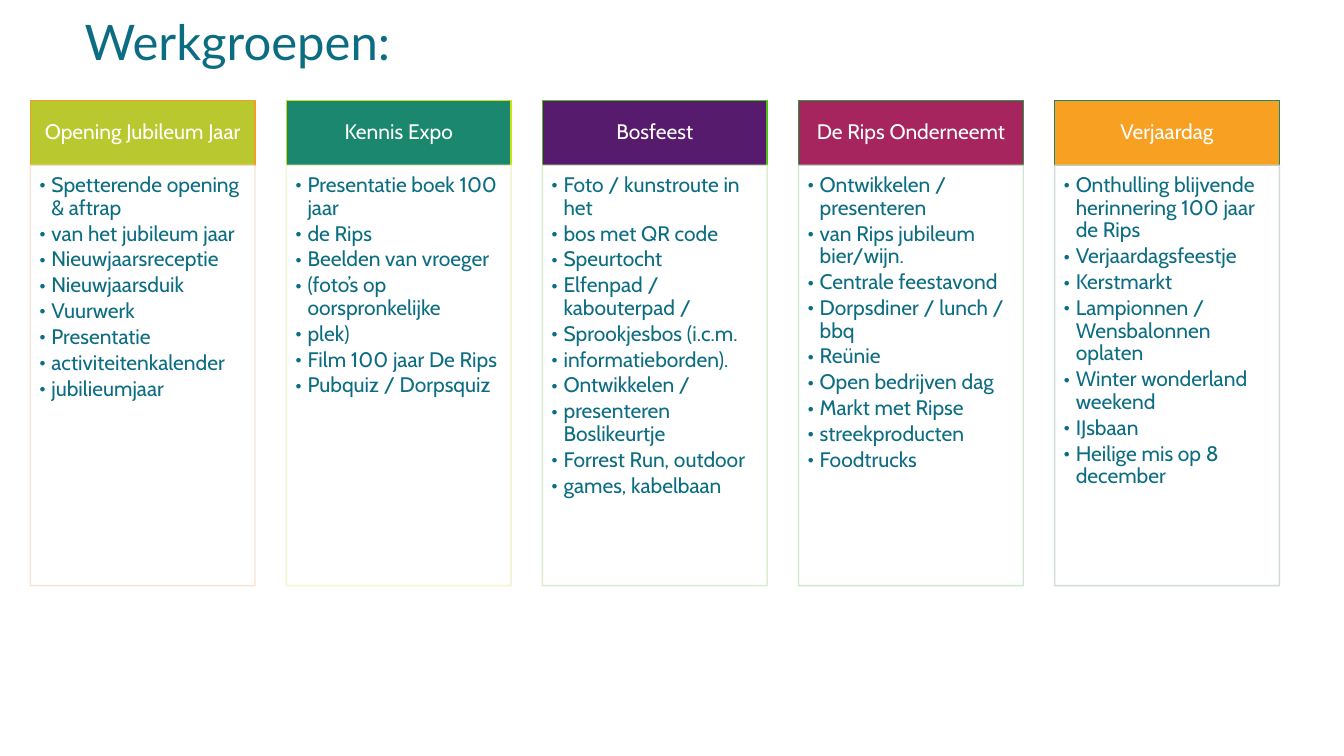
from dataclasses import dataclass

from lxml.etree import SubElement
from pptx import Presentation
from pptx.dml.color import RGBColor
from pptx.enum.shapes import MSO_SHAPE
from pptx.enum.text import MSO_ANCHOR as Anchor, PP_ALIGN as Align
from pptx.oxml.ns import qn
from pptx.util import Inches, Pt


@dataclass(frozen=True)
class Theme:
    teal: str = "0C6D82"
    white: str = "FFFFFF"
    title_font: str = "Lato"
    body_font: str = "Cabin"
    title_size: float = 35
    body_size: float = 15
    headings: tuple = ("BAC82F", "1B876F", "571B6D", "A7255F", "F8A022")
    heading_lines: tuple = ("F39D21", "C7E314", "4DC318", "1AA33B", "1B866F")
    list_lines: tuple = ("FADFCD", "F4F2CB", "DAEDCA", "CAE4CD", "CCD9D5")


theme = Theme()

workgroups = [
    ("Opening Jubileum Jaar", [
        "Spetterende opening & aftrap", "van het jubileum jaar",
        "Nieuwjaarsreceptie", "Nieuwjaarsduik", "Vuurwerk", "Presentatie",
        "activiteitenkalender", "jubilieumjaar"]),
    ("Kennis Expo", [
        "Presentatie boek 100 jaar", "de Rips", "Beelden van vroeger",
        "(foto’s op oorspronkelijke", "plek)", "Film 100 jaar De Rips",
        "Pubquiz / Dorpsquiz"]),
    ("Bosfeest", [
        "Foto / kunstroute in het", "bos met QR code", "Speurtocht",
        "Elfenpad / kabouterpad /", "Sprookjesbos (i.c.m.",
        "informatieborden).", "Ontwikkelen /", "presenteren Boslikeurtje",
        "Forrest Run, outdoor", "games, kabelbaan"]),
    ("De Rips Onderneemt", [
        "Ontwikkelen / presenteren", "van Rips jubileum bier/wijn.",
        "Centrale feestavond", "Dorpsdiner / lunch / bbq", "Reünie",
        "Open bedrijven dag", "Markt met Ripse", "streekproducten",
        "Foodtrucks"]),
    ("Verjaardag", [
        "Onthulling blijvende herinnering 100 jaar de Rips",
        "Verjaardagsfeestje", "Kerstmarkt",
        "Lampionnen / Wensbalonnen oplaten", "Winter wonderland weekend",
        "IJsbaan", "Heilige mis op 8 december"]),
]


def add_panel(left, top, width, height, line, insets, anchor):
    panel = slide.shapes.add_shape(
        MSO_SHAPE.RECTANGLE, Inches(left), Inches(top), Inches(width), Inches(height))
    panel.shadow.inherit = False
    panel.line.color.rgb = RGBColor.from_string(line)
    panel.line.width = Pt(1)
    frame = panel.text_frame
    frame.word_wrap = True
    frame.vertical_anchor = anchor
    frame.margin_left, frame.margin_top, frame.margin_right, frame.margin_bottom = map(
        Inches, insets)
    return panel


def write(paragraph, text, font, size, color, align=Align.LEFT):
    paragraph.alignment = align
    paragraph.line_spacing = 0.9
    run = paragraph.add_run()
    run.text = text
    run.font.name = font
    run.font.size = Pt(size)
    run.font.color.rgb = RGBColor.from_string(color)


prs = Presentation()
prs.slide_width = Inches(13.33)
prs.slide_height = Inches(7.5)
slide = prs.slides.add_slide(prs.slide_layouts[6])

title = slide.shapes.add_textbox(Inches(0.74), 0, Inches(11.5), Inches(0.89)).text_frame
title.word_wrap = True
title.vertical_anchor = Anchor.MIDDLE
write(title.paragraphs[0], "Werkgroepen:", theme.title_font, theme.title_size, theme.teal)

first_left, pitch, column_width = 0.3, 2.54, 2.23
heading_top, heading_height, list_height = 1, 0.64, 4.17

for column, (name, activities) in enumerate(workgroups):
    left = first_left + column * pitch

    heading = add_panel(left, heading_top, column_width, heading_height,
                        theme.heading_lines[column], (0.12, 0.07, 0.12, 0.07), Anchor.MIDDLE)
    heading.fill.solid()
    heading.fill.fore_color.rgb = RGBColor.from_string(theme.headings[column])
    write(heading.text_frame.paragraphs[0], name, theme.body_font, theme.body_size,
          theme.white, Align.CENTER)

    activity_list = add_panel(left, heading_top + heading_height, column_width, list_height,
                              theme.list_lines[column], (0.09, 0.09, 0.12, 0.13), Anchor.TOP)
    activity_list.fill.background()
    line_color = activity_list.line.fill._xPr.find(qn("a:solidFill"))[0]
    SubElement(line_color, qn("a:alpha"), val="90000")

    frame = activity_list.text_frame
    for row, activity in enumerate(activities):
        paragraph = frame.add_paragraph() if row else frame.paragraphs[0]
        write(paragraph, activity, theme.body_font, theme.body_size, theme.teal)
        paragraph.space_after = Pt(0.15 * theme.body_size)
        properties = paragraph._p.get_or_add_pPr()
        properties.set("marL", str(Inches(0.12)))
        properties.set("indent", str(-Inches(0.12)))
        SubElement(properties, qn("a:buFont"), typeface=theme.body_font)
        SubElement(properties, qn("a:buChar"), char="•")

prs.save("out.pptx")
